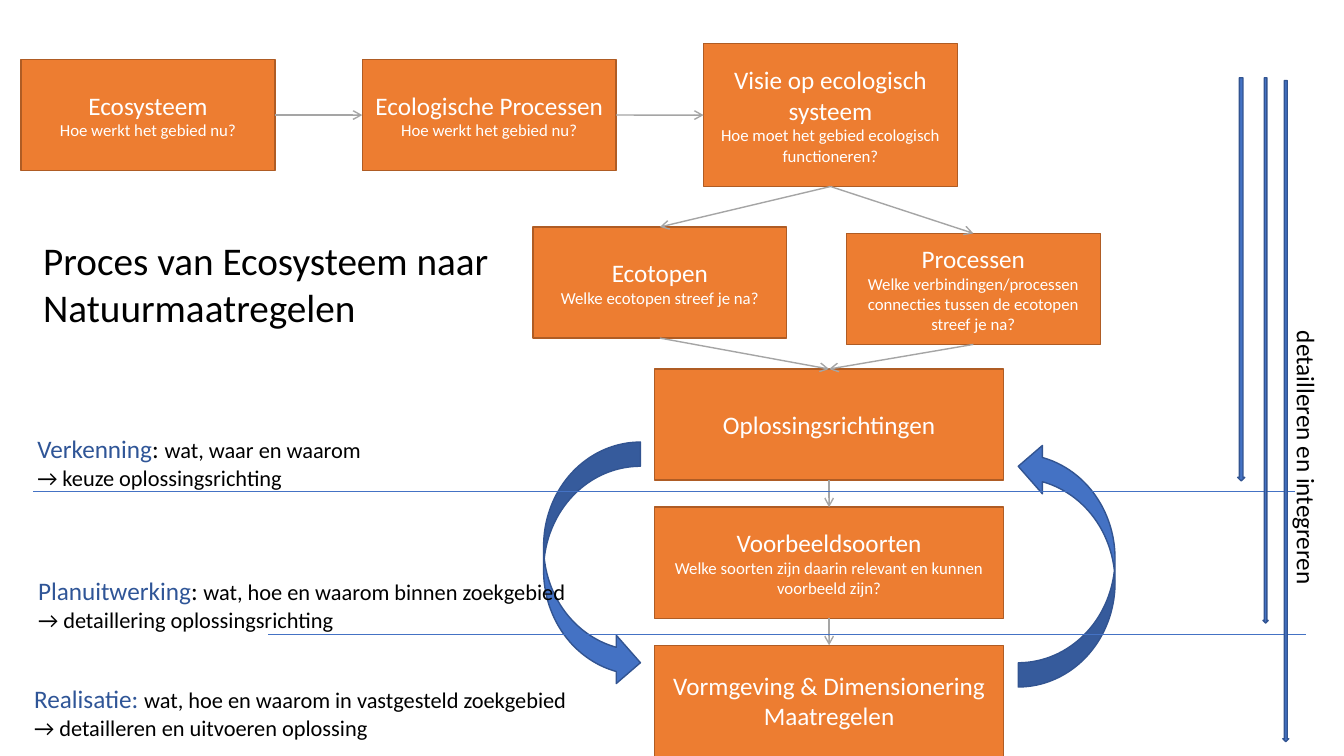
from pptx import Presentation
from pptx.dml.color import RGBColor
from pptx.enum.shapes import MSO_CONNECTOR, MSO_SHAPE
from pptx.enum.text import MSO_ANCHOR, MSO_AUTO_SIZE, PP_ALIGN
from pptx.oxml.ns import qn
from pptx.util import Cm, Pt
from lxml.etree import SubElement

FONT = "Calibri"
ORANGE, ORANGE_EDGE = "ED7D31", "AF5C24"
BLUE, BLUE_EDGE, HEADING_BLUE = "4472C4", "325491", "2F5597"
GRAY, WHITE, BLACK = "A5A5A5", "FFFFFF", "000000"
TOP, BOTTOM, LEFT, RIGHT = 0, 2, 1, 3  # connection sites of a rectangle


def color(hex_string):
    return RGBColor.from_string(hex_string)


def style_font(font, size, hex_string):
    font.name, font.size = FONT, Pt(size)
    font.color.rgb = color(hex_string)


def add_block(slide, preset, left, top, width, height, fill, edge):
    shape = slide.shapes.add_shape(preset, Cm(left), Cm(top), Cm(width), Cm(height))
    shape.shadow.inherit = False
    shape.fill.solid()
    shape.fill.fore_color.rgb = color(fill)
    shape.line.color.rgb = color(edge)
    shape.line.width = Pt(1)
    return shape


def add_line(slide, start, end, hex_string, width):
    points = [Cm(value) for value in (*start, *end)]
    connector = slide.shapes.add_connector(MSO_CONNECTOR.STRAIGHT, *points)
    connector.line.color.rgb = color(hex_string)
    connector.line.width = Pt(width)
    SubElement(connector._element.spPr, qn("a:effectLst"))
    return connector


def add_text(slide, left, top, width, height, wrap=False):
    shape = slide.shapes.add_textbox(Cm(left), Cm(top), Cm(width), Cm(height))
    shape.text_frame.word_wrap = wrap
    shape.text_frame.auto_size = MSO_AUTO_SIZE.SHAPE_TO_FIT_TEXT
    return shape


def add_step(slide, left, top, width, height, name, question=None):
    shape = add_block(slide, MSO_SHAPE.RECTANGLE, left, top, width, height, ORANGE, ORANGE_EDGE)
    frame = shape.text_frame
    frame.word_wrap = True
    frame.vertical_anchor = MSO_ANCHOR.MIDDLE
    frame.text = f"{name}\n{question}" if question else name
    for paragraph, size in zip(frame.paragraphs, (18, 12)):
        paragraph.alignment = PP_ALIGN.CENTER
        style_font(paragraph.font, size, WHITE)
    return shape


def add_flow_arrow(slide, source, source_site, target, target_site):
    connector = add_line(slide, (0, 0), (1, 1), GRAY, 1)
    connector.begin_connect(source, source_site)
    connector.end_connect(target, target_site)
    SubElement(connector.line._get_or_add_ln(), qn("a:tailEnd"), type="arrow")


def add_flowchart(slide, left, top):
    width, wide, height, pitch = 6.4, 8.79, 2.8, 3.48

    # Analysis and vision
    row = top + 0.4
    ecosystem = add_step(slide, left, row, width, height,
                         "Ecosysteem", "Hoe werkt het gebied nu?")
    processes = add_step(slide, left + 8.6, row, width, height,
                         "Ecologische Processen", "Hoe werkt het gebied nu?")
    vision = add_step(slide, left + 17.2, top, width, 3.6, "Visie op ecologisch systeem",
                      "Hoe moet het gebied ecologisch functioneren?")

    # Elaboration of the vision
    ecotopes = add_step(slide, left + 12.9, top + 4.62, width, height,
                        "Ecotopen", "Welke ecotopen streef je na?")
    links = add_step(slide, left + 20.8, top + 4.78, width, height, "Processen",
                     "Welke verbindingen/processen connecties tussen de ecotopen streef je na?")

    # Design column
    design = [
        ("Oplossingsrichtingen",),
        ("Voorbeeldsoorten", "Welke soorten zijn daarin relevant en kunnen voorbeeld zijn?"),
        ("Vormgeving & Dimensionering Maatregelen",),
    ]
    directions, species, measures = [
        add_step(slide, left + 15.97, top + 8.2 + index * pitch, wide, height, *texts)
        for index, texts in enumerate(design)
    ]

    # Arrows between the steps
    for source, target in ((ecosystem, processes), (processes, vision)):
        add_flow_arrow(slide, source, RIGHT, target, LEFT)
    for source, target in ((vision, ecotopes), (vision, links), (ecotopes, directions),
                           (links, directions), (directions, species), (species, measures)):
        add_flow_arrow(slide, source, BOTTOM, target, TOP)


def add_cycle(slide, left, top, width, height):
    arrow_width = 2.44
    for offset, rotation in ((0, 0), (width - arrow_width, 180)):
        arrow = add_block(slide, MSO_SHAPE.CURVED_RIGHT_ARROW, left + offset, top,
                          arrow_width, height, BLUE, BLUE_EDGE)
        arrow.rotation = rotation


def add_title(slide, left, top, width, height):
    frame = add_text(slide, left, top, width, height, wrap=True).text_frame
    frame.text = "Proces van Ecosysteem naar Natuurmaatregelen"
    style_font(frame.paragraphs[0].font, 28, BLACK)


def add_phase(slide, left, top, width, name, separator, scope, result):
    frame = add_text(slide, left, top, width, 1.7).text_frame
    heading, outcome = frame.paragraphs[0], frame.add_paragraph()
    for text, size, hex_string in ((name, 18, HEADING_BLUE), (separator, 18, BLACK),
                                   (scope, 16, BLACK)):
        if text:
            run = heading.add_run()
            run.text = text
            style_font(run.font, size, hex_string)
    outcome.text = f"→ {result}"
    style_font(outcome.font, 16, BLACK)


def add_phases(slide, left, top):
    # Dividing lines
    for start, end, offset in ((0.23, 32.03, 1.58), (6.15, 32.31, 5.18)):
        add_line(slide, (left + start, top + offset), (left + end, top + offset), BLUE, 0.5)

    # Phase descriptions
    add_phase(slide, left + 0.08, top, 8.79, "Verkenning", ": ",
              "wat, waar en waarom", "keuze oplossingsrichting")
    add_phase(slide, left + 0.1, top + 3.58, 14.1, "Planuitwerking", ": ",
              "wat, hoe en waarom binnen zoekgebied", "detaillering oplossingsrichting")
    add_phase(slide, left, top + 6.3, 13.97, "Realisatie: ", "",
              "wat, hoe en waarom in vastgesteld zoekgebied", "detailleren en uitvoeren oplossing")


def add_detail_scale(slide, left, top):
    # One arrow for each phase
    for offset, drop, width, height in ((0, 0, 0.18, 10.16), (0.64, 0, 0.13, 13.74),
                                        (1.14, 0.07, 0.15, 16.66)):
        add_block(slide, MSO_SHAPE.DOWN_ARROW, left + offset, top + drop,
                  width, height, BLUE, BLUE_EDGE)

    # Vertical label
    label = add_text(slide, left - 1.75, top + 9.11, 6.98, 1.02)
    label.rotation = 90
    label.text_frame.text = "detailleren en integreren"
    style_font(label.text_frame.paragraphs[0].font, 18, BLACK)


def main():
    presentation = Presentation()
    presentation.slide_width, presentation.slide_height = Cm(33.87), Cm(19.05)
    slide = presentation.slides.add_slide(presentation.slide_layouts[6])
    add_flowchart(slide, 0.53, 1.1)
    add_cycle(slide, 13.7, 11.14, 14.4, 6.17)
    add_title(slide, 0.84, 5.84, 11.79, 3.84)
    add_phases(slide, 0.61, 10.8)
    add_detail_scale(slide, 31.19, 1.96)
    presentation.save("out.pptx")


if __name__ == "__main__":
    main()
